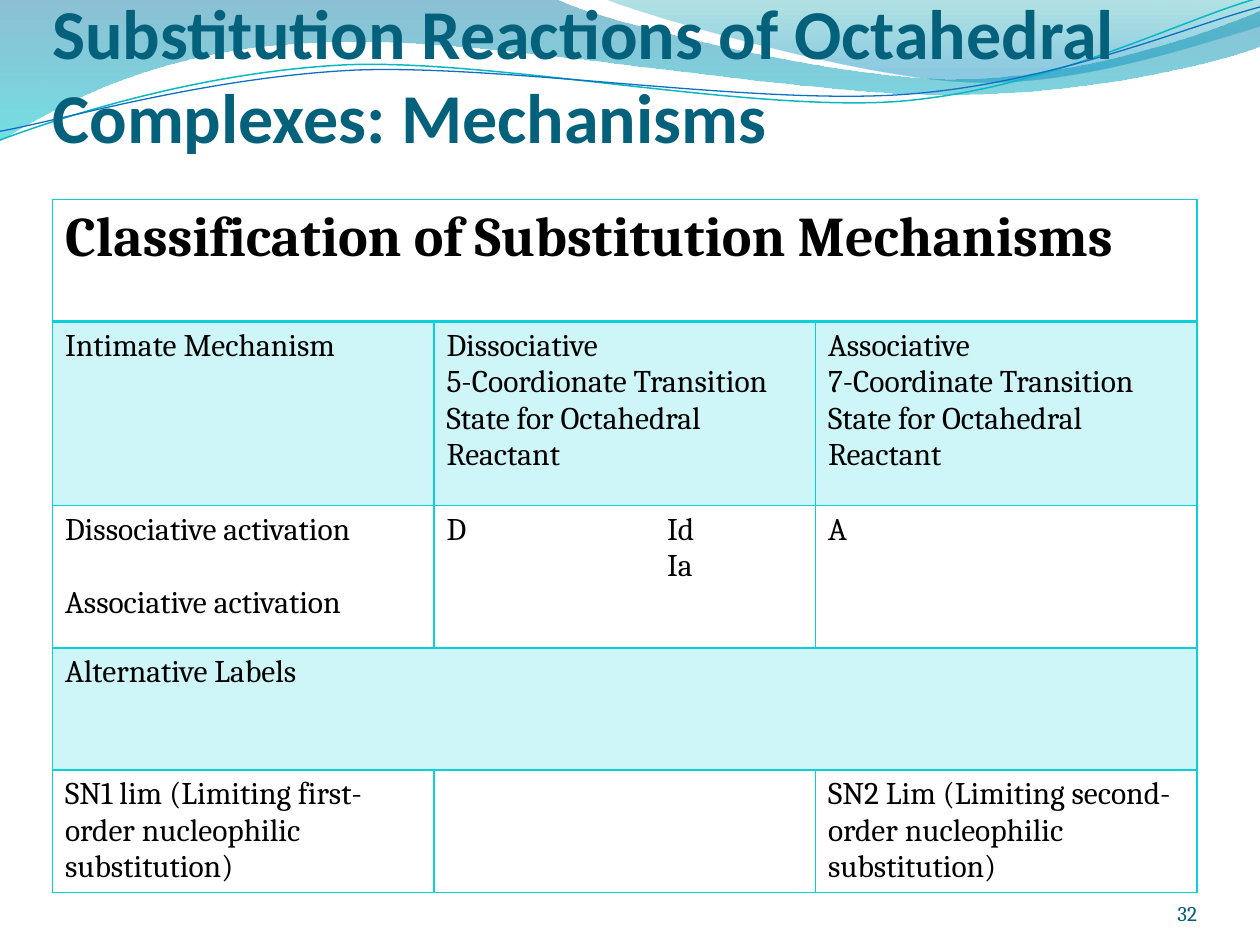
import pptx
import pptx.dml.color
import pptx.enum.text
import pptx.oxml
import pptx.oxml.ns
import pptx.util
from pptx.util import Pt

COLORS = {
    "title": "04617B", "number": "045D75", "text": "000000",
    "border": "0BD0D9", "teal_line": "0AB8BF", "blue_line": "0F6FC6",
}
TITLE = "Substitution Reactions of Octahedral Complexes: Mechanisms"
PAGE_NUMBER = "32"

# Table: cell texts, one line per paragraph; None continues a merged cell
ROWS = [
    ["Classification of Substitution Mechanisms", None, None],
    ["Intimate Mechanism",
     "Dissociative\n5-Coordionate Transition State for Octahedral Reactant",
     "Associative\n7-Coordinate Transition State for Octahedral Reactant"],
    ["Dissociative activation\nAssociative activation", "D\tId\n\tIa", "A"],
    ["Alternative Labels", None, None],
    ["SN1 lim (Limiting first-order nucleophilic substitution)", "",
     "SN2 Lim (Limiting second-order nucleophilic substitution)"],
]
ROW_HEIGHTS = [69.84, 105.12, 81.36, 69.84, 69.84]
COLUMN_WIDTH = 218
TABLE_LEFT, TABLE_TOP = 30, 114
LABEL_TAB = 126
ACTIVATION_GAP = 21

# Waves: start, then lines (x, y) or Bezier curves (x1, y1, x2, y2, x, y)
# Gradient stops: position, colour, opacity in percent
FILLED_WAVES = [
    ((0, 0),
     [(317, -1), (343, 12, 478, 45, 546, 45), (614, 45, 690, 19, 720, 6),
      (721, 26), (708, 32, 626, 55, 537, 54), (448, 54, 275, 20, 185, 24),
      (93, 26, 33, 60, -1, 81)],
     [(0, "0074A1", 45), (1, "00C6CF", 55)]),
    ((345, -1),
     [(366, 8, 491, 45, 554, 47), (616, 50, 692, 23, 720, 15), (720, 0)],
     [(0, "00A1A9", 30), (0.8, "008BBF", 45)]),
]
LINE_WAVES = [
    ((0, 80),
     [(35, 67, 114, 41, 199, 37), (284, 34, 427, 64, 513, 58),
      (600, 51, 675, 11, 719, -1)], "teal_line", 0.85),
    ((0, 75),
     [(34, 69, 118, 44, 204, 40), (290, 37, 430, 60, 516, 54),
      (602, 48, 678, 15, 720, 4)], "blue_line", 0.75),
]


def rgb(value):
    return pptx.dml.color.RGBColor.from_string(value)


def set_opacity(parent, percent):
    for color in parent.iter(pptx.oxml.ns.qn("a:srgbClr")):
        alpha = color.makeelement(pptx.oxml.ns.qn("a:alpha"), {"val": str(percent * 1000)})
        color.append(alpha)


def add_wave(slide, start, segments, close):
    builder = slide.shapes.build_freeform(Pt(start[0]), Pt(start[1]))
    for segment in segments:
        points = zip(segment[::2], segment[1::2])
        builder.add_line_segments([(Pt(x), Pt(y)) for x, y in points], close=False)
    if close:
        builder.add_line_segments([], close=True)
    wave = builder.convert_to_shape()
    wave.shadow.inherit = False

    # Turn each group of three points into one curve
    steps = iter(list(wave._element.iter(pptx.oxml.ns.qn("a:lnTo"))))
    for segment in segments:
        group = [next(steps) for _ in segment[::2]]
        if len(group) == 3:
            curve = group[0].makeelement(pptx.oxml.ns.qn("a:cubicBezTo"), {})
            group[0].addprevious(curve)
            for step in group:
                curve.append(step[0])
                step.getparent().remove(step)
    return wave


def style_text(paragraph, font, size, color, bold=False):
    for run in paragraph.runs:
        run.font.name, run.font.size, run.font.bold = font, Pt(size), bold
        run.font.color.rgb = rgb(COLORS[color])


def add_text(slide, box, text, font, size, color, bold=False, top_inset=0, align=None):
    frame = slide.shapes.add_textbox(*map(Pt, box)).text_frame
    frame.word_wrap = True
    frame.margin_left = frame.margin_right = frame.margin_bottom = 0
    frame.margin_top = Pt(top_inset)
    frame.vertical_anchor = pptx.enum.text.MSO_ANCHOR.BOTTOM
    frame.text = text
    frame.paragraphs[0].alignment = align
    style_text(frame.paragraphs[0], font, size, color, bold)


def set_borders(cell, widths):
    properties = cell._tc.get_or_add_tcPr()
    for index, (side, width) in enumerate(zip("LRTB", widths)):
        properties.insert(index, pptx.oxml.parse_xml(
            f'<a:ln{side} {pptx.oxml.ns.nsdecls("a")} w="{Pt(width)}"><a:solidFill>'
            f'<a:srgbClr val="{COLORS["border"]}"/></a:solidFill></a:ln{side}>'))


def add_label_tab(paragraph):
    paragraph._p.get_or_add_pPr().append(pptx.oxml.parse_xml(
        f'<a:tabLst {pptx.oxml.ns.nsdecls("a")}>'
        f'<a:tab pos="{Pt(LABEL_TAB)}" algn="l"/></a:tabLst>'))


def add_mechanism_table(slide):
    columns = len(ROWS[0])
    table = slide.shapes.add_table(
        len(ROWS), columns, Pt(TABLE_LEFT), Pt(TABLE_TOP),
        Pt(COLUMN_WIDTH * columns), Pt(sum(ROW_HEIGHTS))).table
    table.first_row = table.horz_banding = False
    for column in table.columns:
        column.width = Pt(COLUMN_WIDTH)
    for r, texts in enumerate(ROWS):
        table.rows[r].height = Pt(ROW_HEIGHTS[r])
        if texts[1] is None:
            table.cell(r, 0).merge(table.cell(r, columns - 1))
        for c, text in enumerate(texts):
            cell = table.cell(r, c)
            if r % 2:
                cell.fill.solid()
                cell.fill.fore_color.rgb = rgb(COLORS["border"])
                set_opacity(cell._tc.tcPr, 20)
            else:
                cell.fill.background()
            set_borders(cell, (1, 1, 2 if r == 1 else 1, 2 if r == 0 else 1))
            if r == len(ROWS) - 1:
                cell.margin_bottom = Pt(1)  # keeps three lines within the row
            if not text:
                continue
            cell.text_frame.text = text
            for paragraph in cell.text_frame.paragraphs:
                style_text(paragraph, "Cambria", 18 if r else 32, "text", bold=r == 0)
                if "\t" in text:
                    add_label_tab(paragraph)
    # One line of air between the two kinds of activation
    table.cell(2, 0).text_frame.paragraphs[1].space_before = Pt(ACTIVATION_GAP)


def main():
    deck = pptx.Presentation()
    deck.slide_width, deck.slide_height = Pt(720), Pt(540)
    slide = deck.slides.add_slide(deck.slide_layouts[6])

    # Wave decoration
    for start, segments, stops in FILLED_WAVES:
        wave = add_wave(slide, start, segments, close=True)
        wave.line.fill.background()
        wave.fill.gradient()
        wave.fill.gradient_angle = 270
        for stop, (position, color, opacity) in zip(wave.fill.gradient_stops, stops):
            stop.position = position
            stop.color.rgb = rgb(color)
            set_opacity(stop._gs, opacity)
    for start, segments, color, width in LINE_WAVES:
        wave = add_wave(slide, start, segments, close=False)
        wave.fill.background()
        wave.line.color.rgb = rgb(COLORS[color])
        wave.line.width = Pt(width)

    # Title, table and page number
    add_text(slide, (30, 0, 648, 90), TITLE, "Calibri", 40, "title", bold=True, top_inset=3.6)
    add_mechanism_table(slide)
    add_text(slide, (624, 500, 60, 29), PAGE_NUMBER, "Cambria", 12, "number",
             align=pptx.enum.text.PP_ALIGN.RIGHT)
    deck.save("out.pptx")


if __name__ == "__main__":
    main()
